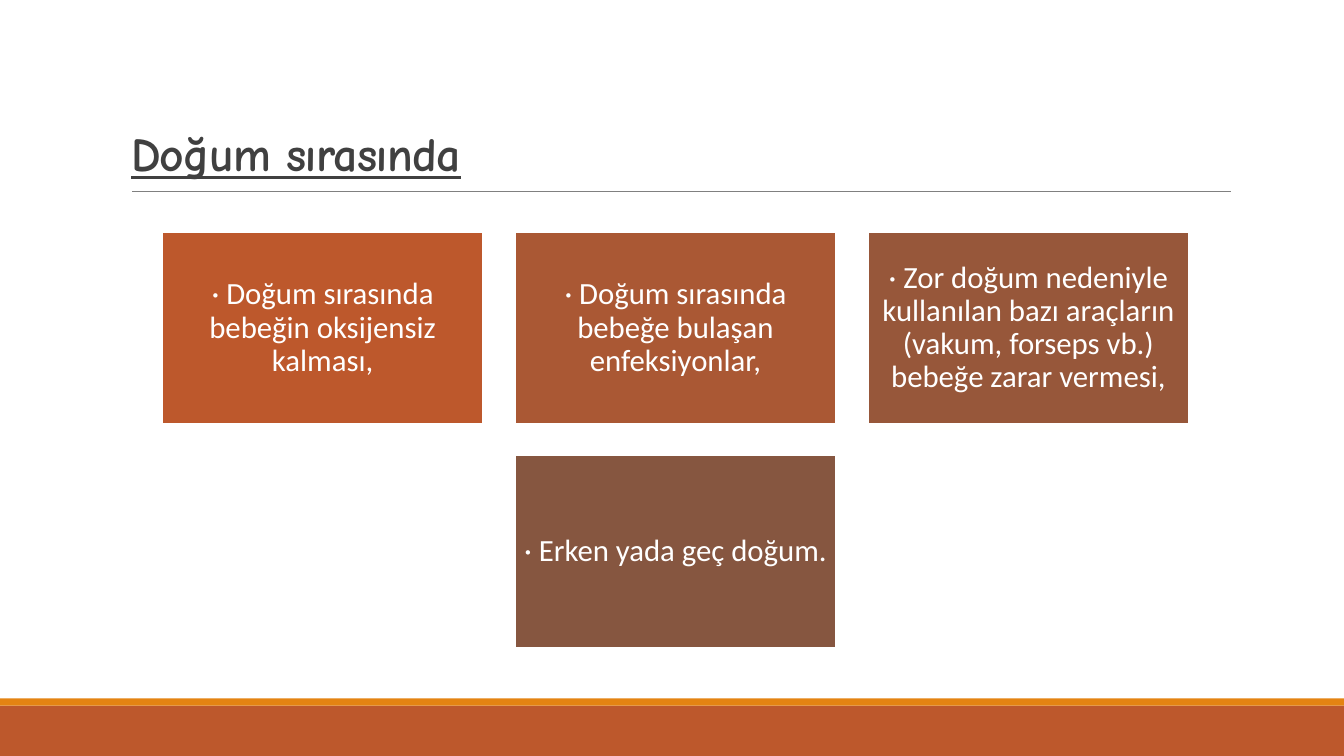
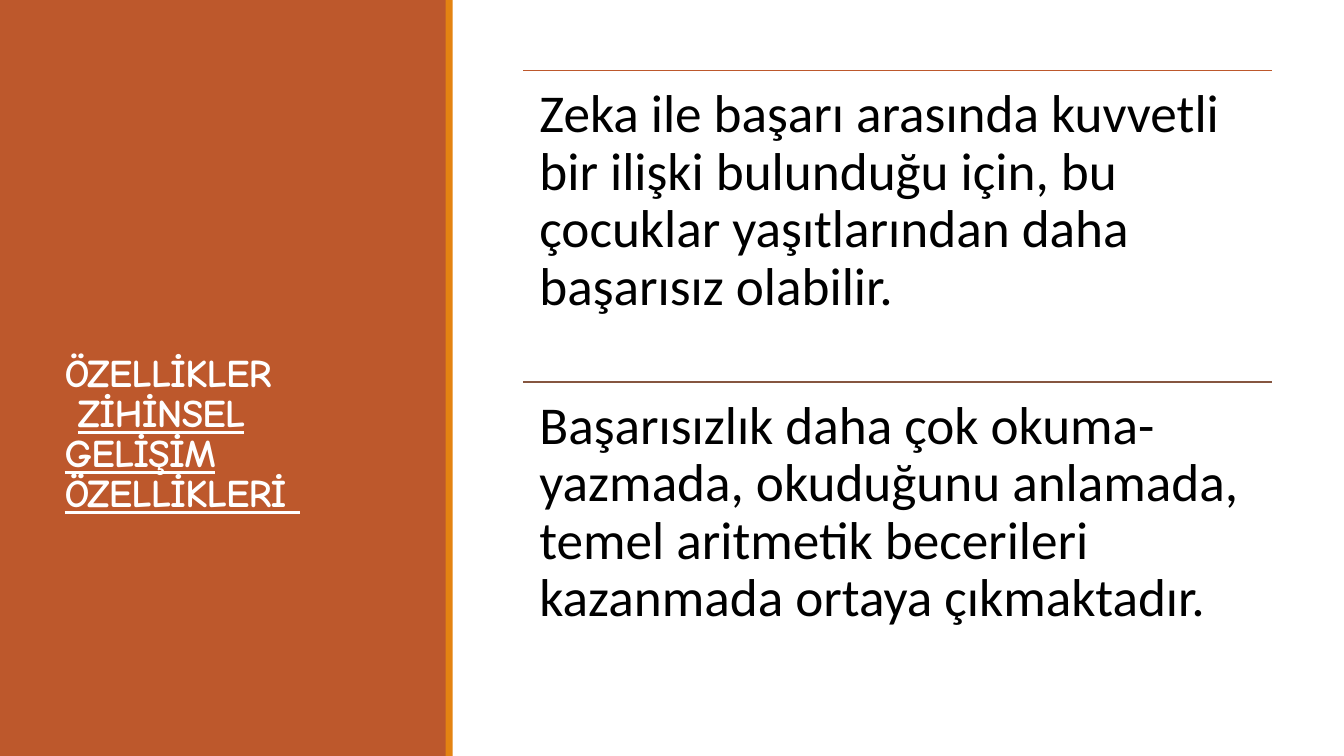
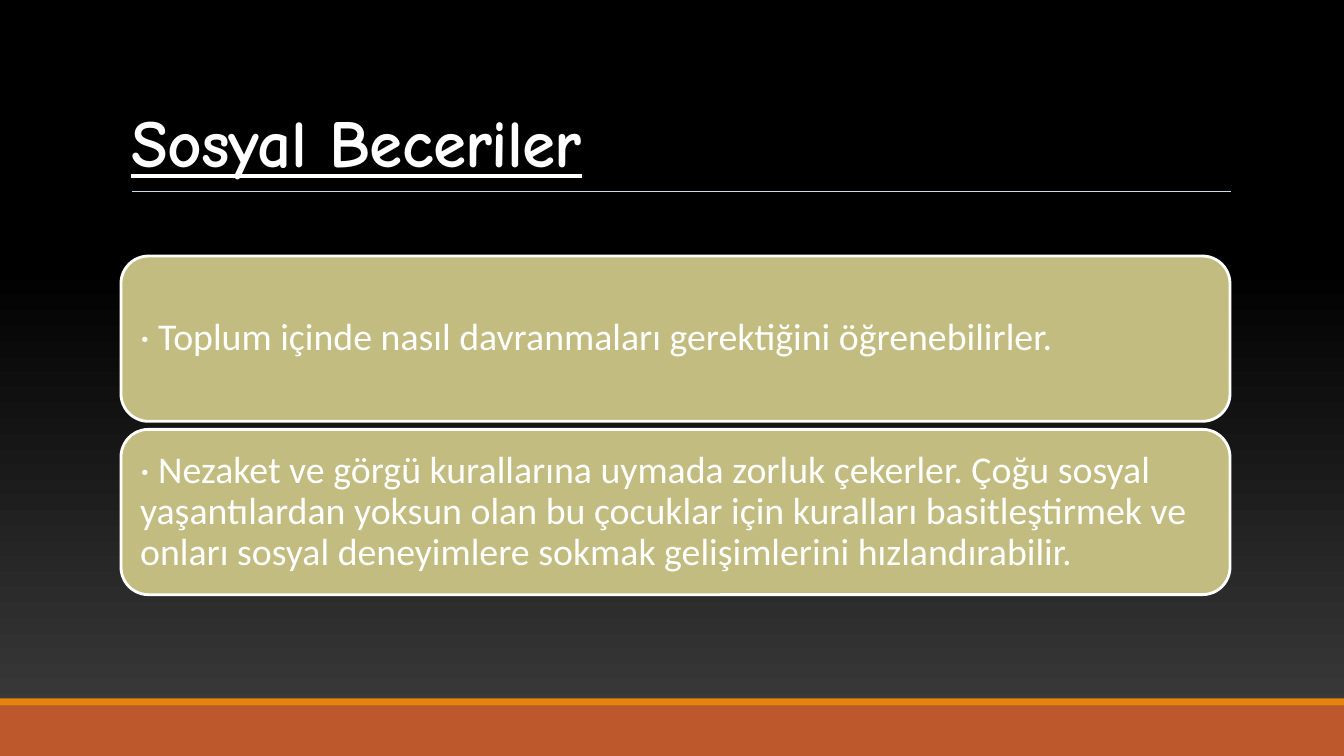
from pptx import Presentation
from pptx.dml.color import RGBColor
from pptx.enum.shapes import MSO_CONNECTOR, MSO_SHAPE
from pptx.enum.text import MSO_ANCHOR, MSO_AUTO_SIZE, PP_ALIGN
from pptx.util import Inches, Pt
from lxml.etree import SubElement
from pptx.oxml.ns import qn

RUST, ORANGE, BROWN, WHITE = "BD582C", "E48312", "865640", "FFFFFF"
rgb = RGBColor.from_string

TITLE = {"name": "Comic Neue", "bold": True, "underline": True}
BODY = {"name": "Calibri"}


def box(s, kind, at, fill=None, line=None, width=1.25):
    sp = s.shapes.add_shape(kind, *[Inches(v) for v in at])
    sp.shadow.inherit = False
    if fill:
        sp.fill.solid()
        sp.fill.fore_color.rgb = rgb(fill)
    else:
        sp.fill.background()
    if line:
        sp.line.color.rgb = rgb(line)
        sp.line.width = Pt(width)
    else:
        sp.line.fill.background()
    return sp


def write(sp, lines, size, color, style, anchor, inset, spacing, align=PP_ALIGN.LEFT):
    tf = sp.text_frame
    frame = {"word_wrap": True, "auto_size": MSO_AUTO_SIZE.NONE, "vertical_anchor": anchor}
    frame.update({f"margin_{side}": Inches(inset) for side in ("left", "top", "right", "bottom")})
    for key, value in frame.items():
        setattr(tf, key, value)
    for i, text in enumerate(lines):
        p = tf.add_paragraph() if i else tf.paragraphs[0]
        p.alignment, p.line_spacing = align, spacing
        r = p.add_run()
        r.text = text
        for key, value in {**style, "size": Pt(size)}.items():
            setattr(r.font, key, value)
        r.font.color.rgb = rgb(color)


prs = Presentation()
prs.slide_width, prs.slide_height = Inches(13.33), Inches(7.5)

titles = [
    (["Doğum sırasında"], (1.2, 0.31, 11, 1.59), 34, "404040", MSO_ANCHOR.BOTTOM),
    (["ÖZELLİKLER", "ZİHİNSEL GELİŞİM ÖZELLİKLERİ "], (0.54, 3.3, 3.37, 2.04), 28, WHITE, MSO_ANCHOR.MIDDLE),
    (["Sosyal Beceriler"], (1.2, 0.31, 11, 1.59), 48, WHITE, MSO_ANCHOR.BOTTOM),
]
bottom_bands = [((0, 7, 13.33, 0.5), RUST), ((0, 6.93, 13.33, 0.07), ORANGE)]
side_bands = [((0, 0, 4.43, 7.5), RUST), ((4.42, 0, 0.07, 7.5), ORANGE)]
rules = [
    [(1.31, 12.21, 1.9, "808080", 0.5)],
    [(5.19, 12.62, 0.7, RUST, 1.25), (5.19, 12.62, 3.79, BROWN, 1.25)],
    [(1.31, 12.21, 1.9, "CCDDEA", 0.5)],
]

for (lines, at, size, color, anchor), bands, slide_rules in zip(
        titles, [bottom_bands, side_bands, bottom_bands], rules):
    s = prs.slides.add_slide(prs.slide_layouts[5])
    for band, fill in bands:
        box(s, MSO_SHAPE.RECTANGLE, band, fill)
    for x1, x2, y, line, width in slide_rules:
        cn = s.shapes.add_connector(MSO_CONNECTOR.STRAIGHT, Inches(x1), Inches(y), Inches(x2), Inches(y))
        cn.line.color.rgb = rgb(line)
        cn.line.width = Pt(width)
        SubElement(cn._element.spPr, qn("a:effectLst"))
    title = s.shapes.title
    title.left, title.top, title.width, title.height = [Inches(v) for v in at]
    write(title, lines, size, color, TITLE, anchor, 0.1, 0.85)
    for p in title.text_frame.paragraphs:
        p.runs[0].font._element.set("spc", "-50")
    s.shapes._spTree.append(title._element)

birth, mental, social = prs.slides

causes = [
    ("· Doğum sırasında bebeğin oksijensiz kalması,", RUST),
    ("· Doğum sırasında bebeğe bulaşan enfeksiyonlar,", "AA5834"),
    ("· Zor doğum nedeniyle kullanılan bazı araçların (vakum, forseps vb.) bebeğe zarar vermesi,", "97573A"),
    ("· Erken yada geç doğum.", BROWN),
]
for (text, fill), (col, row) in zip(causes, [(0, 0), (1, 0), (2, 0), (1, 1)]):
    sp = box(birth, MSO_SHAPE.RECTANGLE, (1.61 + 3.5 * col, 2.3 + 2.22 * row, 3.18, 1.91), fill, WHITE)
    write(sp, [text], 22, WHITE, BODY, MSO_ANCHOR.MIDDLE, 0.06, 0.9, PP_ALIGN.CENTER)

heading, subheading = mental.shapes.title.text_frame.paragraphs
heading.runs[0].font.underline = False
subheading._p.get_or_add_pPr().set("indent", str(Inches(0.13)))

traits = [
    "Zeka ile başarı arasında kuvvetli bir ilişki bulunduğu için, bu çocuklar yaşıtlarından daha başarısız olabilir.",
    "Başarısızlık daha çok okuma-yazmada, okuduğunu anlamada, temel aritmetik becerileri kazanmada ortaya çıkmaktadır.",
]
for i, text in enumerate(traits):
    sp = box(mental, MSO_SHAPE.RECTANGLE, (5.19, 0.7 + 3.09 * i, 7.43, 3.09))
    write(sp, [text], 38, "000000", BODY, MSO_ANCHOR.TOP, 0.16, 0.9)

bg = social.background.fill
bg.gradient()
bg.gradient_angle = 90
for stop, (position, color) in zip(bg.gradient_stops, [(0, "3F3F3F"), (0.65, "000000")]):
    stop.position = position
    stop.color.rgb = rgb(color)

skills = [
    "· Toplum içinde nasıl davranmaları gerektiğini öğrenebilirler.",
    "· Nezaket ve görgü kurallarına uymada zorluk çekerler. Çoğu sosyal yaşantılardan yoksun olan bu çocuklar "
    "için kuralları basitleştirmek ve onları sosyal deneyimlere sokmak gelişimlerini hızlandırabilir.",
]
for i, text in enumerate(skills):
    sp = box(social, MSO_SHAPE.ROUNDED_RECTANGLE, (1.2, 2.54 + 1.72 * i, 11, 1.64), "C2BC80", WHITE, 2)
    write(sp, [text], 27, WHITE, BODY, MSO_ANCHOR.MIDDLE, 0.11, 0.9)

prs.save("out.pptx")
